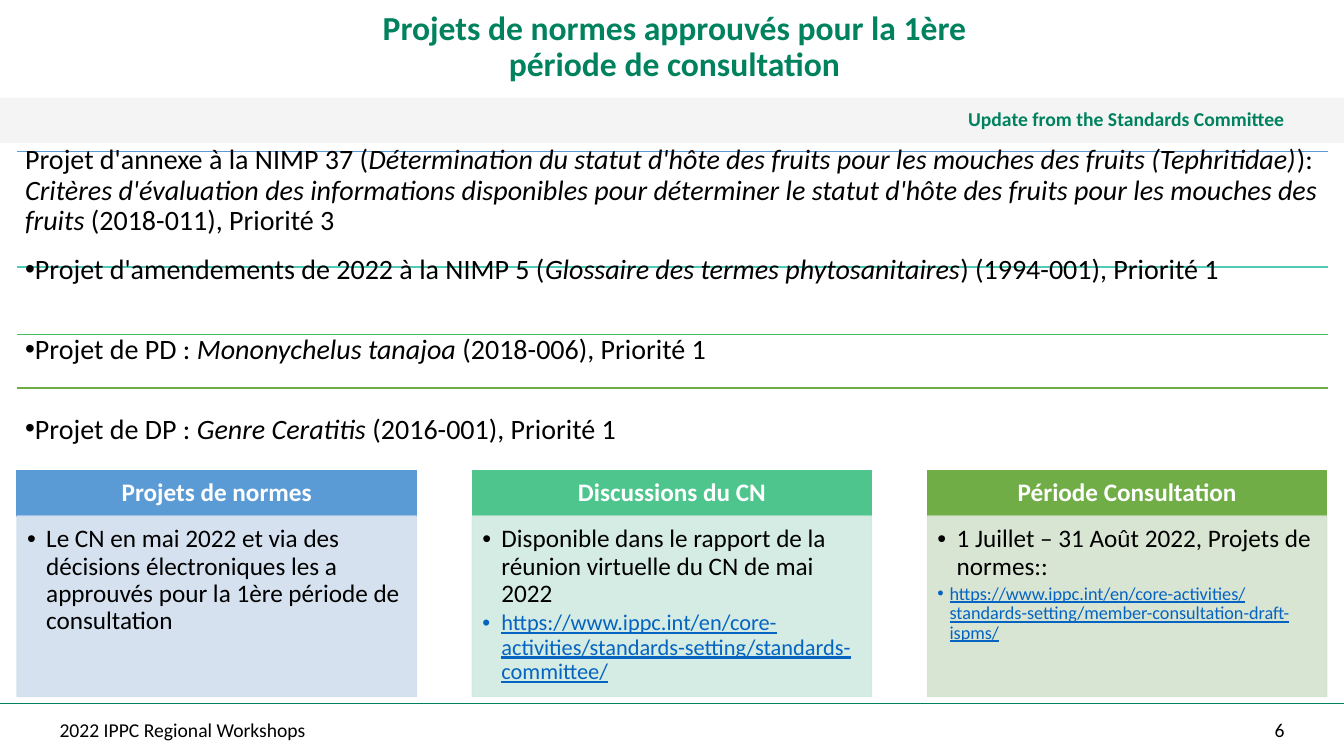
from lxml.etree import SubElement
from pptx import Presentation
from pptx.dml.color import RGBColor
from pptx.enum.shapes import MSO_CONNECTOR, MSO_SHAPE
from pptx.enum.text import MSO_ANCHOR, PP_ALIGN
from pptx.oxml.ns import qn
from pptx.util import Inches, Pt

COLORS = {
    "green": "00825F", "black": "000000", "white": "FFFFFF",
    "gray": "E7E6E6", "link": "0563C1", "blue": "5B9BD5",
    "teal": "52CAB8", "leaf": "49BF64", "olive": "70AD47",
    "mint": "4DC58D", "pale blue": "D2DEEF",
    "pale mint": "D0EAE1", "pale olive": "D5E3CF",
}
BAR = (0.59, 0.05, 0.59, 0.05)

# Projects: rule height, rule colour, bullet, runs as (text, italic)
PROJECTS = [
    (1.5, "blue", False, [
        ("Projet d'annexe à la NIMP 37 (", False),
        ("Détermination du statut d'hôte des fruits pour les mouches "
         "des fruits (Tephritidae)", True),
        ("): ", False),
        ("Critères d'évaluation des informations disponibles pour déterminer "
         "le statut d'hôte des fruits pour les mouches des fruits ", True),
        ("(2018-011), Priorité 3", False)]),
    (2.65, "teal", True, [
        ("Projet d'amendements de 2022 à la NIMP 5 (", False),
        ("Glossaire des termes phytosanitaires", True),
        (") (1994-001), Priorité 1", False)]),
    (3.32, "leaf", True, [
        ("Projet de PD : ", False),
        ("Mononychelus tanajoa ", True),
        ("(2018-006), Priorité 1", False)]),
    (3.85, "olive", True, [
        ("Projet de DP : ", False),
        ("Genre Ceratitis ", True),
        ("(2016-001), Priorité 1", False)]),
]

# Cards: heading, colours, body, link, link size, link indent
CARDS = [
    ("Projets de normes", "blue", "pale blue",
     "Le CN en mai 2022 et via des décisions électroniques les a approuvés "
     "pour la 1ère période de consultation", None, 0, 0),
    ("Discussions du CN", "mint", "pale mint",
     "Disponible dans le rapport de la réunion virtuelle du CN de mai 2022",
     "https://www.ippc.int/en/core-activities/standards-setting/"
     "standards-committee/", 16, 0.19),
    ("Période Consultation", "olive", "pale olive",
     "1 Juillet – 31 Août 2022, Projets de normes::",
     "https://www.ippc.int/en/core-activities/standards-setting/"
     "member-consultation-draft-ispms/", 13, 0.12),
]


def rgb(name):
    return RGBColor.from_string(COLORS[name])


def fade(fill, alpha):
    for color in fill._xPr.iter(qn("a:srgbClr")):
        SubElement(color, qn("a:alpha"), val=str(alpha * 1000))


def add_rule(slide, left, top, width, color):
    rule = slide.shapes.add_connector(
        MSO_CONNECTOR.STRAIGHT, Inches(left), Inches(top),
        Inches(left + width), Inches(top))
    rule.line.color.rgb = rgb(color)
    rule.line.width = Pt(1)
    SubElement(rule._element.spPr, qn("a:effectLst"))


def add_rect(slide, box, color, alpha=100, edge=True):
    rect = slide.shapes.add_shape(MSO_SHAPE.RECTANGLE, *map(Inches, box))
    rect.shadow.inherit = False
    rect.fill.solid()
    rect.fill.fore_color.rgb = rgb(color)
    if edge:
        rect.line.color.rgb = rgb(color)
        rect.line.width = Pt(1)
    else:
        rect.line.fill.background()
    if alpha < 100:
        fade(rect.fill, alpha)
    return rect


def set_frame(shape, pads, anchor=MSO_ANCHOR.MIDDLE):
    frame = shape.text_frame
    frame.word_wrap = True
    frame.vertical_anchor = anchor
    (frame.margin_left, frame.margin_top,
     frame.margin_right, frame.margin_bottom) = map(Inches, pads)
    return frame


def add_box(slide, box, pads, anchor=MSO_ANCHOR.MIDDLE):
    return set_frame(slide.shapes.add_textbox(*map(Inches, box)), pads, anchor)


def set_para(para, runs, size, color="black", align=PP_ALIGN.LEFT,
             bold=False, line=False, indent=None, after=0):
    """Fill a paragraph with runs; an indent, even zero, gives it a bullet."""
    if indent is not None:
        props = para._p.get_or_add_pPr()
        props.set("marL", str(Inches(indent)))
        props.set("indent", str(-Inches(indent)))
        SubElement(props, qn("a:buFont"), typeface="Arial")
        SubElement(props, qn("a:buChar"), char="•")
    para.alignment = align
    para.line_spacing = 0.9
    para.space_after = Pt(after)
    for text, slant in runs:
        run = para.add_run()
        run.text = text
        font = run.font
        font.name, font.size, font.color.rgb = "Calibri", Pt(size), rgb(color)
        font.bold, font.italic, font.underline = bold, slant, line


def add_head(slide, width):
    # Title
    frame = add_box(slide, (2.8, 0, 7.58, 1), (0.59, 0, 0.39, 0.05))
    set_para(frame.paragraphs[0],
             [("Projets de normes approuvés pour la 1ère période "
               "de consultation", False)],
             24, "green", PP_ALIGN.CENTER, bold=True)
    # Gray band
    band = add_rect(slide, (0, 0.97, width, 0.45), "gray", 42, edge=False)
    set_para(set_frame(band, BAR).paragraphs[0],
             [("Update from the Standards Committee", False)],
             14, "green", PP_ALIGN.RIGHT, bold=True)


def add_list(slide, left, top, width, pitch):
    for i, (rule, color, dot, runs) in enumerate(PROJECTS):
        add_rule(slide, left, rule, width, color)
        frame = add_box(slide, (left, top + i * pitch, width, pitch),
                        (0.08,) * 4)
        set_para(frame.paragraphs[0], runs, 20, indent=0 if dot else None)


def add_card(slide, left, top, width, card):
    head, dark, pale, text, link, size, indent = card
    # Heading
    bar = add_rect(slide, (left, top, width, 0.45), dark)
    set_para(set_frame(bar, (0.14, 0.08, 0.14, 0.08)).paragraphs[0],
             [(head, False)], 18, "white", PP_ALIGN.CENTER, bold=True)
    # Body
    body = add_rect(slide, (left, top + 0.45, width, 1.79), pale, 90)
    frame = set_frame(body, (0.1, 0.1, 0.14, 0.16), MSO_ANCHOR.TOP)
    set_para(frame.paragraphs[0], [(text, False)], 18, indent=0.19, after=2.7)
    if link:
        set_para(frame.add_paragraph(), [(link, False)], size, "link",
                 line=True, indent=indent)


def add_foot(slide, width):
    add_rule(slide, 0, 6.98, width, "green")
    for left, span, text, align in (
            (0, 8.25, "2022 IPPC Regional Workshops", PP_ALIGN.LEFT),
            (width - 1.42, 1.42, "6", PP_ALIGN.RIGHT)):
        frame = add_box(slide, (left, 7.06, span, 0.38), BAR)
        set_para(frame.paragraphs[0], [(text, False)], 14, align=align)


def main():
    deck = Presentation()
    width = 13.33
    deck.slide_width, deck.slide_height = Inches(width), Inches(7.5)
    slide = deck.slides.add_slide(deck.slide_layouts[6])
    add_head(slide, width)
    add_list(slide, 0.17, 1.5, 13, 0.79)
    for i, card in enumerate(CARDS):
        add_card(slide, 0.17 + i * 4.515, 4.67, 3.96, card)
    add_foot(slide, width)
    deck.save("out.pptx")


if __name__ == "__main__":
    main()
